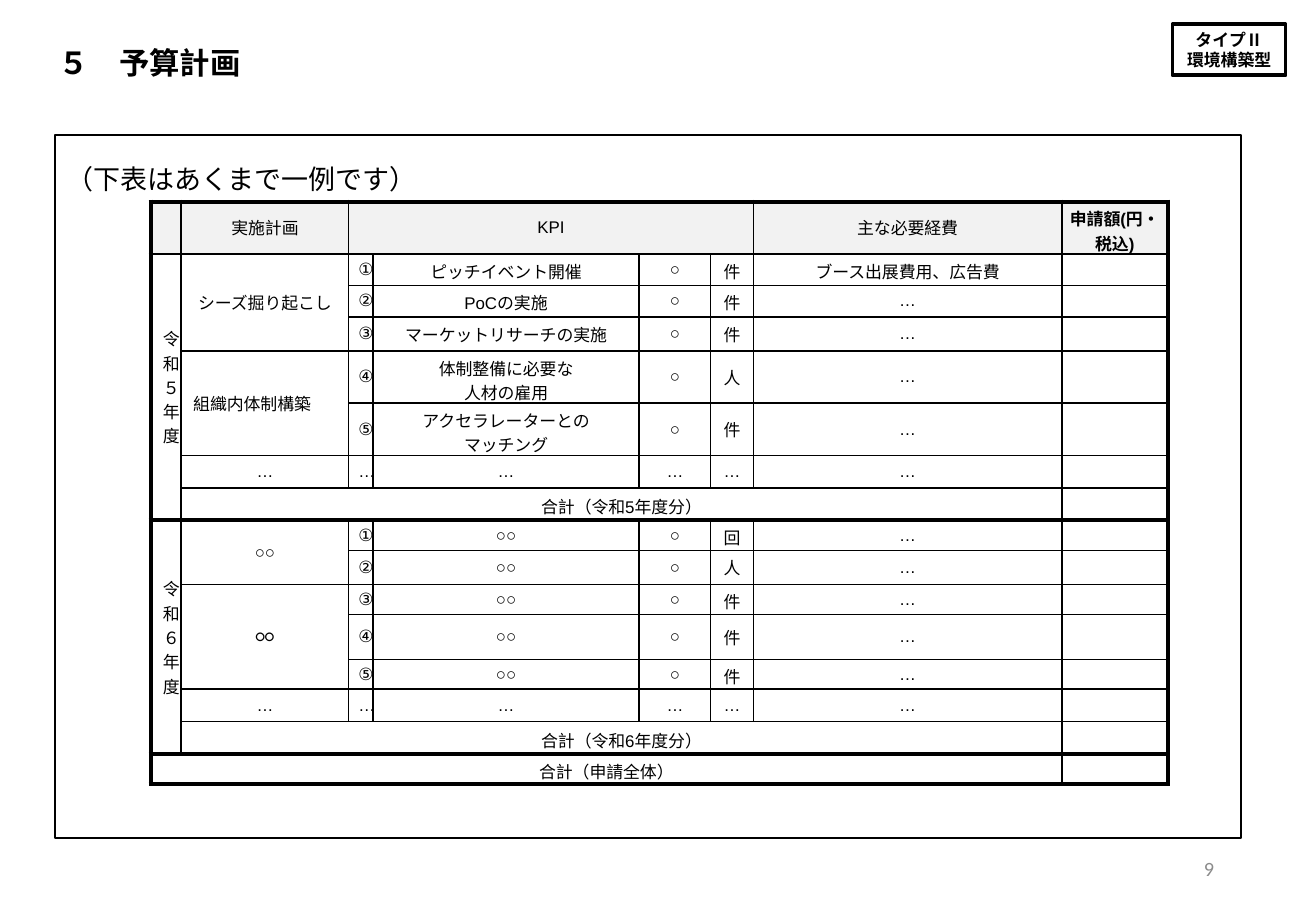
from lxml import etree
from pptx import Presentation
from pptx.dml.color import RGBColor
from pptx.enum.shapes import MSO_SHAPE
from pptx.enum.text import MSO_ANCHOR, PP_ALIGN
from pptx.oxml.ns import qn
from pptx.util import Inches, Pt

BLACK = RGBColor(0, 0, 0)
WHITE = RGBColor(255, 255, 255)
HEADER_GRAY = RGBColor(0xF2, 0xF2, 0xF2)
NUMBER_GRAY = RGBColor(0x8C, 0x8C, 0x8C)
RECT = MSO_SHAPE.RECTANGLE
MIDDLE, TOP = MSO_ANCHOR.MIDDLE, MSO_ANCHOR.TOP
LEFT, CENTER, RIGHT = PP_ALIGN.LEFT, PP_ALIGN.CENTER, PP_ALIGN.RIGHT
JP_FONT = "Noto Sans CJK JP"


def write(tf, text, size, font="Arial", color=BLACK, bold=False,
          align=CENTER, anchor=MIDDLE, margins=(0.1, 0.05)):
    """Fill a text frame or table cell, one paragraph per line of text."""
    tf.margin_left = tf.margin_right = Inches(margins[0])
    tf.margin_top = tf.margin_bottom = Inches(margins[1])
    tf.vertical_anchor = anchor
    tf.word_wrap = True
    frame = getattr(tf, "text_frame", tf)
    for i, line in enumerate(text.split("\n")):
        p = frame.paragraphs[0] if i == 0 else frame.add_paragraph()
        p.alignment = align
        if not line:
            etree.SubElement(p._p, qn("a:endParaRPr"), sz=str(size * 100))
            continue
        r = p.add_run()
        r.text = line
        r.font.size, r.font.name, r.font.bold = Pt(size), font, bold
        r.font.color.rgb = color


def add_border(cell, side, width):
    ln = etree.SubElement(cell._tc.get_or_add_tcPr(), qn("a:ln" + side),
                          w=str(Pt(width)))
    fill = etree.SubElement(ln, qn("a:solidFill"))
    etree.SubElement(fill, qn("a:srgbClr"), val=str(BLACK))


prs = Presentation()
prs.slide_width, prs.slide_height = Inches(10.83), Inches(7.5)
s = prs.slides.add_slide(prs.slide_layouts[5])

# Title, type badge and frame
title = s.shapes.title
title.left, title.top = Inches(0.44), Inches(0.32)
title.width, title.height = Inches(4.05), Inches(0.38)
write(title.text_frame, "５　予算計画", 18, "Calibri", bold=True, align=LEFT,
      margins=(0.04, 0.04))

badge = s.shapes.add_shape(RECT, Inches(9.65), Inches(0.2), Inches(0.93), Inches(0.42))
badge.fill.background()
badge.line.width = Pt(2.25)
write(badge.text_frame, "タイプⅡ\n環境構築型", 10, bold=True, margins=(0.04, 0.04))

frame = s.shapes.add_shape(RECT, Inches(0.45), Inches(1.11), Inches(9.76), Inches(5.79))
frame.fill.solid()
frame.fill.fore_color.rgb = WHITE
frame.line.width = Pt(1.2)
for sp in (badge, frame):
    sp.shadow.inherit = False
    sp.line.color.rgb = BLACK

number = s.shapes.add_textbox(Inches(7.65), Inches(6.95), Inches(2.44), Inches(0.4))
write(number.text_frame, "9", 12, "Calibri", NUMBER_GRAY, align=RIGHT)
note = s.shapes.add_textbox(Inches(0.45), Inches(1.29), Inches(3.76), Inches(0.37))
write(note.text_frame, "（下表はあくまで一例です）", 16, JP_FONT, align=LEFT, anchor=TOP)

# Budget table
COLS = [0.25, 1.38, 0.19, 2.19, 0.59, 0.35, 2.54, 0.87]
ROWS = [0.43, 0.26, 0.26, 0.28, 0.43, 0.43, 0.24, 0.24,
        0.23, 0.28, 0.23, 0.37, 0.23, 0.24, 0.25, 0.24]
DOTS = ["…"] * 6
BUDGET = [
    ["", "実施計画", "KPI", "", "", "", "主な必要経費", "申請額(円・税込)"],
    ["令和５年度", "シーズ掘り起こし", "①", "ピッチイベント開催", "○", "件",
     "ブース出展費用、広告費", ""],
    ["", "", "②", "PoCの実施", "○", "件", "…", ""],
    ["", "", "③", "マーケットリサーチの実施", "○", "件", "…", ""],
    ["", "組織内体制構築", "④", "体制整備に必要な\n人材の雇用", "○", "人", "…", ""],
    ["", "", "⑤", "アクセラレーターとの\nマッチング", "○", "件", "…", ""],
    ["", *DOTS, ""],
    ["", "合計（令和5年度分）", "", "", "", "", "", ""],
    ["令和６年度", "○○", "①", "○○", "○", "回", "…", ""],
    ["", "", "②", "○○", "○", "人", "…", ""],
    ["", "○○", "③", "○○", "○", "件", "…", ""],
    ["", "", "④", "○○", "○", "件", "…", ""],
    ["", "", "⑤", "○○", "○", "件", "…", ""],
    ["", *DOTS, ""],
    ["", "合計（令和6年度分）", "", "", "", "", "", ""],
    ["合計（申請全体）", "", "", "", "", "", "", ""],
]
# First row, first column, last row, last column
MERGES = [(0, 2, 0, 5), (1, 0, 7, 0), (1, 1, 3, 1), (4, 1, 5, 1), (7, 1, 7, 6),
          (8, 0, 14, 0), (8, 1, 9, 1), (10, 1, 12, 1), (14, 1, 14, 6), (15, 0, 15, 6)]
THICK_ABOVE = {0, 8, 15, 16}  # Rows that start a block, and the table's end
AMOUNT_HEADER = (0, 7)

gf = s.shapes.add_table(len(ROWS), len(COLS), Inches(1.24), Inches(1.66),
                        Inches(sum(COLS)), Inches(4.84))
table = gf.table
for col, width in zip(table.columns, COLS):
    col.width = Inches(width)
for row, height in zip(table.rows, ROWS):
    row.height = Inches(height)
gf.height = Inches(4.84)
for r1, c1, r2, c2 in MERGES:
    table.cell(r1, c1).merge(table.cell(r2, c2))

for i, texts in enumerate(BUDGET):
    for j, text in enumerate(texts):
        cell = table.cell(i, j)
        below = i + (cell.span_height if cell.is_merge_origin else 1)
        after = j + (cell.span_width if cell.is_merge_origin else 1)
        for side, thick in (("L", j == 0), ("R", after == len(COLS)),
                            ("T", i in THICK_ABOVE), ("B", below in THICK_ABOVE)):
            add_border(cell, side, 2.75 if thick else 1)
        cell.fill.solid()
        cell.fill.fore_color.rgb = HEADER_GRAY if i == 0 else WHITE
        if (i, j) == AMOUNT_HEADER:
            margins = (0.03, 0.04)
        elif j < 2 and 0 < i < 15:
            margins = (0.1, 0.05)
        else:
            margins = (0.08, 0.04)
        write(cell, text, 10, font="Calibri" if (i, j) == (10, 1) else "Arial",
              bold=(i, j) == AMOUNT_HEADER,
              align=LEFT if (i, j) == (4, 1) else CENTER, margins=margins)

prs.save("out.pptx")
